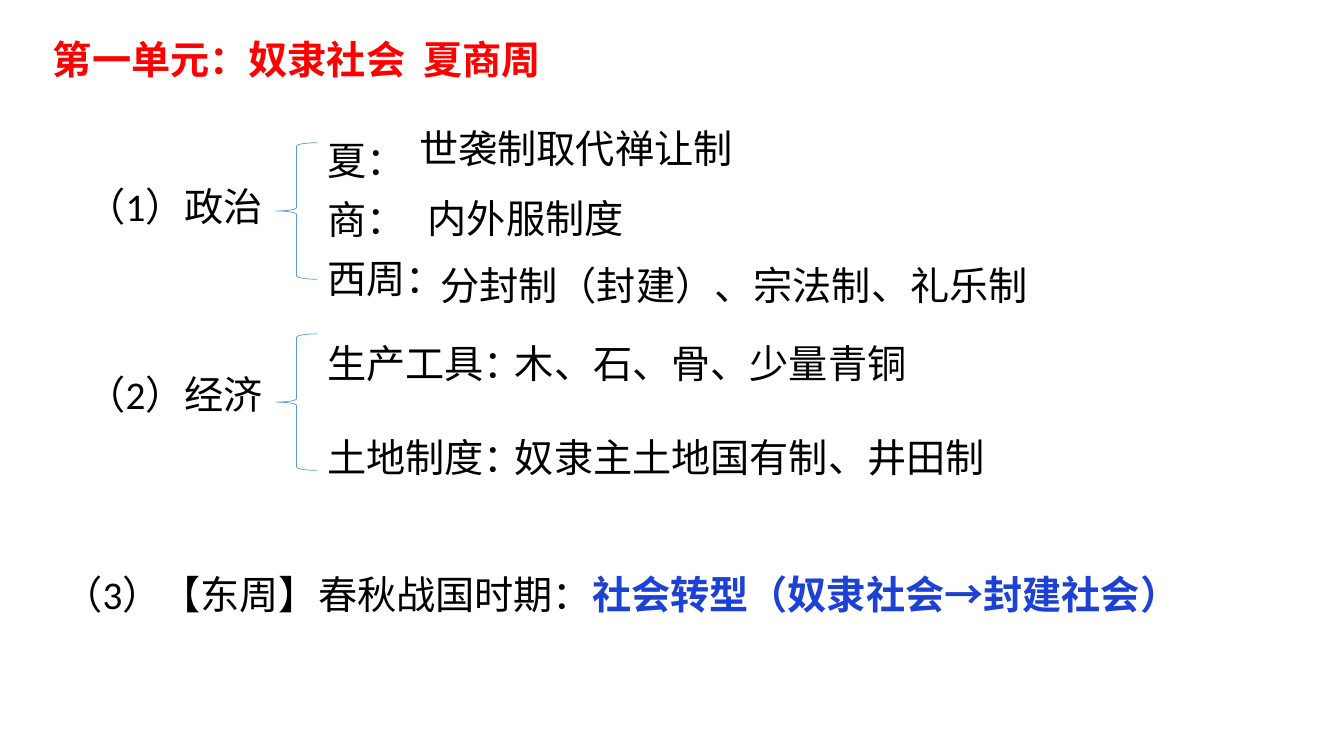
"""Builds a slide outlining the politics and economy of the Xia, Shang and Zhou."""
import pptx
import pptx.util
import pptx.dml.color
import pptx.enum.shapes
import pptx.enum.text

PX = 9525
LINE_HEIGHT = 55
COLOURS = {"title": "FF0000", "body": "000000", "emphasis": "1D41D5", "brace": "5B9BD5"}


def style(run, colour="body", bold=False):
    run.font.name = "Calibri"
    run.font.size = pptx.util.Pt(28)
    run.font.bold = bold
    run.font.color.rgb = pptx.dml.color.RGBColor.from_string(COLOURS[colour])


def add_text(left, top, width, text, height=LINE_HEIGHT, wrap=True, colour="body", bold=False):
    box = slide.shapes.add_textbox(left * PX, top * PX, width * PX, height * PX)
    box.text_frame.word_wrap = wrap
    box.text_frame.text = text
    for paragraph in box.text_frame.paragraphs:
        for run in paragraph.runs:
            style(run, colour, bold)
    return box.text_frame


presentation = pptx.Presentation()
presentation.slide_width = 1280 * PX
presentation.slide_height = 720 * PX
slide = presentation.slides.add_slide(presentation.slide_layouts[6])

add_text(41, 29, 488, "第一单元：奴隶社会  夏商周", wrap=False, colour="title", bold=True)

for topic, topic_top, brace_top in [("（1）政治", 169, 136), ("（2）经济", 348, 318)]:
    add_text(73, topic_top, 210, topic)
    brace = slide.shapes.add_shape(
        pptx.enum.shapes.MSO_SHAPE.LEFT_BRACE, 263 * PX, brace_top * PX, 39 * PX, 130 * PX)
    brace.shadow.inherit = False
    brace.fill.background()
    brace.line.color.rgb = pptx.dml.color.RGBColor.from_string(COLOURS["brace"])
    brace.line.width = pptx.util.Pt(0.5)

dynasties = add_text(302, 114, 608, "夏：\n商：\n西周：", height=174)
for dynasty in dynasties.paragraphs:
    dynasty.alignment = pptx.enum.text.PP_ALIGN.JUSTIFY
    dynasty.line_spacing = 1.25

for left, top, width, system in [
    (390, 114, 322, "世袭制取代禅让制"),
    (398, 180, 210, "内外服制度"),
    (410, 244, 583, "分封制（封建）、宗法制、礼乐制"),
]:
    add_text(left, top, width, system, wrap=False)

for top, width, aspect, detail in [
    (318, 397, "生产工具：", "木、石、骨、少量青铜"),
    (408, 472, "土地制度：", "奴隶主土地国有制、井田制"),
]:
    add_text(302, top, 749, aspect)
    add_text(481, top, width, detail, wrap=False)

eastern_zhou = add_text(51, 538, 1148, "（3）【东周】春秋战国时期：")
transition = eastern_zhou.paragraphs[0].add_run()
transition.text = "社会转型（奴隶社会→封建社会）"
style(transition, "emphasis", bold=True)

presentation.save("out.pptx")
